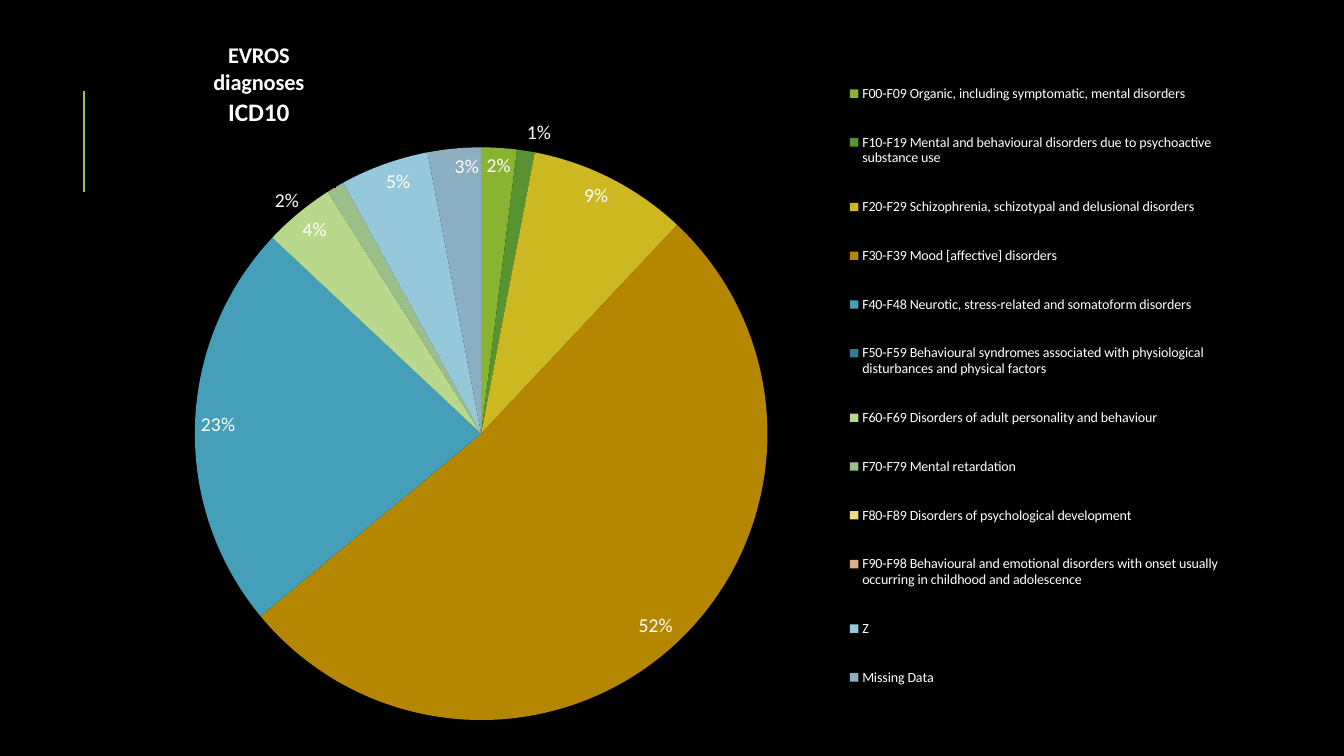
from lxml import etree
from pptx import Presentation
from pptx.chart.data import CategoryChartData
from pptx.dml.color import RGBColor
from pptx.enum.chart import XL_CHART_TYPE, XL_LABEL_POSITION, XL_LEGEND_POSITION
from pptx.enum.shapes import MSO_CONNECTOR
from pptx.enum.text import PP_ALIGN
from pptx.oxml.ns import qn
from pptx.util import Cm, Pt

PIE = XL_CHART_TYPE.PIE
INSIDE = XL_LABEL_POSITION.INSIDE_END
OUTSIDE = XL_LABEL_POSITION.OUTSIDE_END
RIGHT = XL_LEGEND_POSITION.RIGHT
CENTER = PP_ALIGN.CENTER
STRAIGHT = MSO_CONNECTOR.STRAIGHT

BLACK = RGBColor(0x00, 0x00, 0x00)
WHITE = RGBColor(0xFF, 0xFF, 0xFF)
LIME = RGBColor(0x99, 0xCB, 0x38)
FONT = "Calibri"
PERCENT = "0%"

# Content: diagnosis, share in percent, slice colour
TITLE = [("EVROS", 16), ("diagnoses", 16), ("ICD10", 18)]
DIAGNOSES = [
    ("F00-F09 Organic, including symptomatic, mental disorders", 2, RGBColor(0x88, 0xB4, 0x32)),
    ("F10-F19 Mental and behavioural disorders due to psychoactive substance use", 1,
     RGBColor(0x58, 0x93, 0x31)),
    ("F20-F29 Schizophrenia, schizotypal and delusional disorders", 9, RGBColor(0xCC, 0xB8, 0x20)),
    ("F30-F39 Mood [affective] disorders", 52, RGBColor(0xB5, 0x86, 0x00)),
    ("F40-F48 Neurotic, stress-related and somatoform disorders", 23, RGBColor(0x45, 0x9F, 0xB9)),
    ("F50-F59 Behavioural syndromes associated with physiological disturbances "
     "and physical factors", 0, RGBColor(0x31, 0x7D, 0x93)),
    ("F60-F69 Disorders of adult personality and behaviour", 4, RGBColor(0xB8, 0xD9, 0x8B)),
    ("F70-F79 Mental retardation", 1, RGBColor(0x9B, 0xBF, 0x8B)),
    ("F80-F89 Disorders of psychological development", 0, RGBColor(0xEE, 0xDC, 0x85)),
    ("F90-F98 Behavioural and emotional disorders with onset usually occurring "
     "in childhood and adolescence", 0, RGBColor(0xD9, 0xB0, 0x85)),
    ("Ζ", 5, RGBColor(0x95, 0xC8, 0xDB)),
    ("Missing Data", 3, RGBColor(0x8B, 0xAE, 0xC0)),
]
# Labels outside the pie: slice index -> shift as a share of the chart
OUTSIDE_LABELS = {1: (0, 0), 5: (0, 0), 7: (-0.03, 0.04), 8: (0, 0), 9: (0.04, 0)}
# Label that rounds up from the unrounded share
ROUNDED_LABELS = {7: "2%"}


def style(font, size, bold=False):
    for name, value in {"name": FONT, "size": Pt(size), "bold": bold}.items():
        setattr(font, name, value)
    font.color.rgb = WHITE


def set_layout(parent, index, **settings):
    """Give a chart part a manual layout, as the child at the given index."""
    for old in parent.findall(qn("c:layout")):
        parent.remove(old)
    layout = etree.Element(qn("c:layout"))
    manual = etree.SubElement(layout, qn("c:manualLayout"))
    for tag, value in settings.items():
        etree.SubElement(manual, qn("c:" + tag)).set("val", str(value))
    parent.insert(index, layout)


# Page
deck = Presentation()
deck.slide_width, deck.slide_height = Cm(33.87), Cm(19.05)
page = deck.slides.add_slide(deck.slide_layouts[6])
page.background.fill.solid()
page.background.fill.fore_color.rgb = BLACK

# Accent line
accent = page.shapes.add_connector(STRAIGHT, Cm(2.12), Cm(4.83), Cm(2.12), Cm(2.29))
accent.line.color.rgb = LIME
accent.line.width = Pt(1.5)
etree.SubElement(accent.element.spPr, qn("a:effectLst"))

# Pie chart
data = CategoryChartData()
data.categories = [name for name, share, color in DIAGNOSES]
data.add_series("Series 1", [share for name, share, color in DIAGNOSES])
chart = page.shapes.add_chart(PIE, Cm(3.35), Cm(-0.23), Cm(27.86), Cm(19.51), data).chart
style(chart.font, 10)
plot = chart.plots[0]
plot.vary_by_categories = True
set_layout(chart.element.find(".//" + qn("c:plotArea")), 0, layoutTarget="inner",
           xMode="edge", yMode="edge", x=0.056, y=0.202, w=0.518, h=0.74)

# Title
chart.has_title = True
title = chart.chart_title
frame = title.text_frame
for number, (line, size) in enumerate(TITLE):
    para = frame.paragraphs[0] if number == 0 else frame.add_paragraph()
    para.alignment = CENTER
    span = para.add_run()
    span.text = line
    style(span.font, size, bold=True)
title.include_in_layout = False
set_layout(title.element if hasattr(title, "element") else chart.element.find(".//" + qn("c:title")),
           1, xMode="edge", yMode="edge", x=0.07, y=0.06)

# Legend
chart.has_legend = True
legend = chart.legend
legend.position = RIGHT
legend.include_in_layout = False
style(legend.font, 10)
set_layout(chart.element.find(".//" + qn("c:legend")), 1, xMode="edge", yMode="edge",
           x=0.64, y=0.08, w=0.35, h=0.86)

# Slices
series = plot.series[0]
for index, (name, share, color) in enumerate(DIAGNOSES):
    fill = series.points[index].format.fill
    fill.solid()
    fill.fore_color.rgb = color

# Percent labels
labels = series.data_labels
formats = {"show_percentage": True, "show_value": False, "number_format": PERCENT,
           "number_format_is_linked": False, "position": INSIDE}
for name, value in formats.items():
    setattr(labels, name, value)
style(labels.font, 14)

for index, (shift_x, shift_y) in OUTSIDE_LABELS.items():
    label = series.points[index].data_label
    if index in ROUNDED_LABELS:
        span = label.text_frame.paragraphs[0].add_run()
        span.text = ROUNDED_LABELS[index]
        style(span.font, 14)
    else:
        style(label.font, 14)
    label.position = OUTSIDE

for item in series.data_labels._element.findall(qn("c:dLbl")):
    index = int(item.find(qn("c:idx")).get("val"))
    item.find(qn("c:showVal")).set("val", "0")
    item.find(qn("c:showPercent")).set("val", "1")
    text = item.find(qn("c:tx"))
    number_format = etree.Element(qn("c:numFmt"), formatCode=PERCENT, sourceLinked="0")
    item.insert(1 if text is None else 2, number_format)
    shift_x, shift_y = OUTSIDE_LABELS[index]
    if shift_x or shift_y:
        set_layout(item, 1, x=shift_x, y=shift_y)

deck.save("out.pptx")
